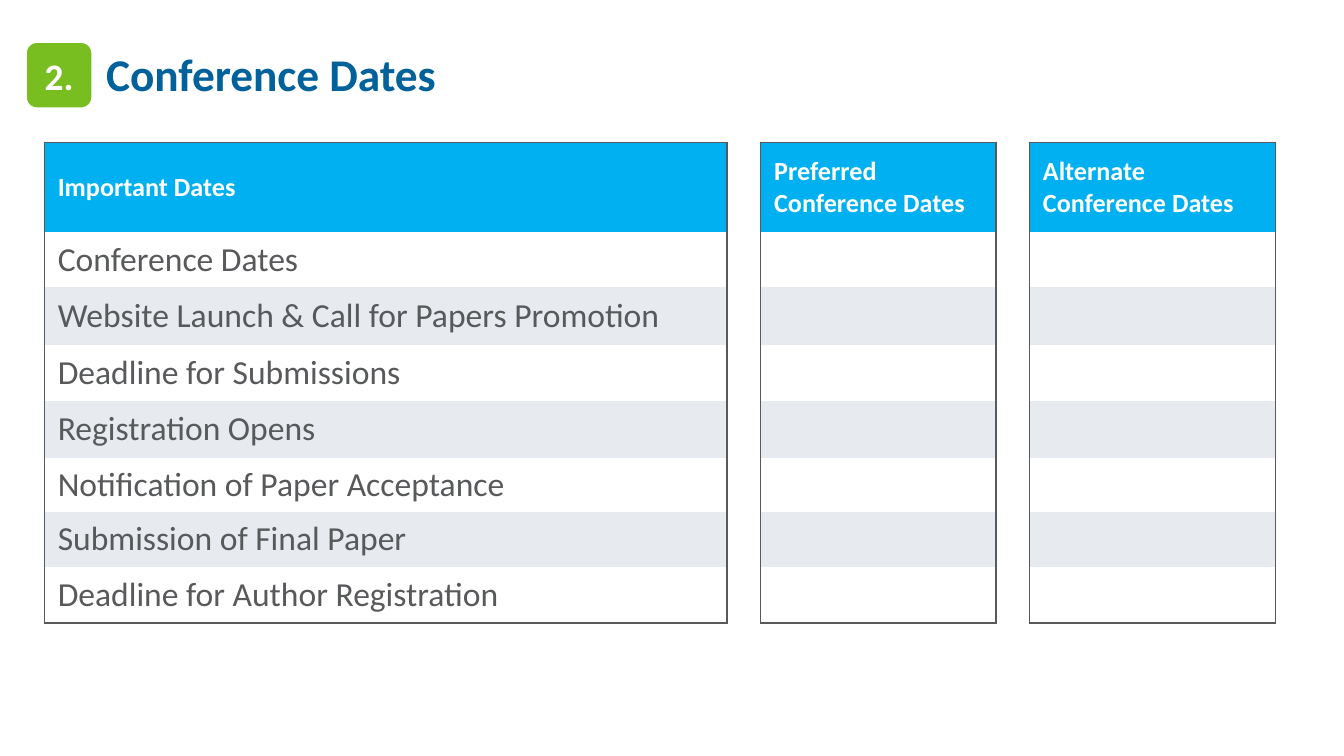
import pptx
import pptx.util
import pptx.dml.color
import pptx.enum.shapes
import pptx.enum.text
import pptx.oxml
import pptx.oxml.ns

COLORS = {
    "title": "00619B",
    "badge": "78BE20",
    "header": "00B0F0",
    "band": "E7EAEF",
    "text": "58595B",
    "white": "FFFFFF",
}
FONT = "Calibri"
NO_STYLE = "{2D5ABB26-0587-4C30-8999-92F81FD0307C}"
MIDDLE = pptx.enum.text.MSO_ANCHOR.MIDDLE
LEFT = pptx.enum.text.PP_ALIGN.LEFT
CENTER = pptx.enum.text.PP_ALIGN.CENTER
SLIDE_WIDTH = 10
SLIDE_HEIGHT = SLIDE_WIDTH * 9 / 16

# Panels sit in the even columns, narrow gaps in the odd ones
HEADERS = ["Important Dates", "Preferred Conference Dates", "Alternate Conference Dates"]
HEADER_HEIGHT = 0.67
MILESTONES = {  # wording and row height
    "Conference Dates": 0.38,
    "Website Launch & Call for Papers Promotion": 0.43,
    "Deadline for Submissions": 0.42,
    "Registration Opens": 0.42,
    "Notification of Paper Acceptance": 0.38,
    "Submission of Final Paper": 0.37,
    "Deadline for Author Registration": 0.42,
}
GAP = 0.25
COLUMNS = [5.08, GAP, 1.75, GAP, 1.83]


def inches(*lengths):
    return [pptx.util.Inches(length) for length in lengths]


def rgb(name):
    return pptx.dml.color.RGBColor.from_string(COLORS[name])


def write(frame, text, size, color, bold=False, align=LEFT, spacing=None):
    frame.text = text
    paragraph = frame.paragraphs[0]
    paragraph.alignment = align
    if spacing:
        paragraph.line_spacing = spacing
    font = paragraph.runs[0].font
    font.name, font.size, font.bold = FONT, pptx.util.Pt(size), bold
    font.color.rgb = rgb(color)


def add_borders(cell, sides):
    """Draw 1 pt lines on the sides, given in the order L, R, T, B."""
    for side in sides:
        cell._tc.get_or_add_tcPr().append(pptx.oxml.parse_xml(
            f'<a:ln{side} {pptx.oxml.ns.nsdecls("a")} w="12700"><a:solidFill>'
            f'<a:srgbClr val="{COLORS["text"]}"/></a:solidFill></a:ln{side}>'))


def fill_cell(cell, color):
    if color:
        cell.fill.solid()
        cell.fill.fore_color.rgb = rgb(color)
    else:
        cell.fill.background()


def add_title(slide, text):
    title = slide.shapes.title
    title.left, title.top, title.width, title.height = inches(0.69, 0.34, 6.39, 0.46)
    frame = title.text_frame
    frame.auto_size = pptx.enum.text.MSO_AUTO_SIZE.NONE
    frame.vertical_anchor = MIDDLE
    write(frame, text, size=24.3, color="title", bold=True, spacing=0.9)


def add_badge(slide, number):
    badge = slide.shapes.add_shape(
        pptx.enum.shapes.MSO_SHAPE.ROUNDED_RECTANGLE, *inches(0.19, 0.31, 0.5, 0.5))
    badge.shadow.inherit = False
    badge.fill.solid()
    badge.fill.fore_color.rgb = rgb("badge")
    badge.line.color.rgb = rgb("white")
    badge.line.width = pptx.util.Pt(1.5)
    frame = badge.text_frame
    frame.margin_left = frame.margin_right = 0
    frame.vertical_anchor = MIDDLE
    write(frame, number, size=20, color="white", bold=True, align=CENTER)


def add_dates_table(slide):
    heights = [HEADER_HEIGHT, *MILESTONES.values()]
    table = slide.shapes.add_table(
        len(heights), len(COLUMNS),
        *inches(0.33, 1.06, sum(COLUMNS), sum(heights))).table
    table._tbl.tblPr.find(pptx.oxml.ns.qn("a:tableStyleId")).text = NO_STYLE
    table.horz_banding = False
    for column, width in zip(table.columns, COLUMNS):
        column.width = pptx.util.Inches(width)
    for row, height in zip(table.rows, heights):
        row.height = pptx.util.Inches(height)

    # Outlines and banding
    last = len(MILESTONES)
    for row in range(last + 1):
        for column in range(len(COLUMNS)):
            cell = table.cell(row, column)
            cell.vertical_anchor = MIDDLE
            is_panel = column % 2 == 0
            edge = {0: "T", last: "B"}.get(row, "") if is_panel else ""
            add_borders(cell, "LR" + edge)
            band = "header" if row == 0 else "band" if row % 2 == 0 else None
            fill_cell(cell, band if is_panel else None)

    # Wording
    for index, header in enumerate(HEADERS):
        write(table.cell(0, 2 * index).text_frame, header, size=14, color="white", bold=True)
    for row, milestone in enumerate(MILESTONES, start=1):
        write(table.cell(row, 0).text_frame, milestone, size=18, color="text")


def main():
    deck = pptx.Presentation()
    deck.slide_width, deck.slide_height = inches(SLIDE_WIDTH, SLIDE_HEIGHT)
    slide = deck.slides.add_slide(deck.slide_layouts[5])
    add_title(slide, "Conference Dates")
    add_dates_table(slide)
    add_badge(slide, "2.")
    deck.save("out.pptx")


if __name__ == "__main__":
    main()
